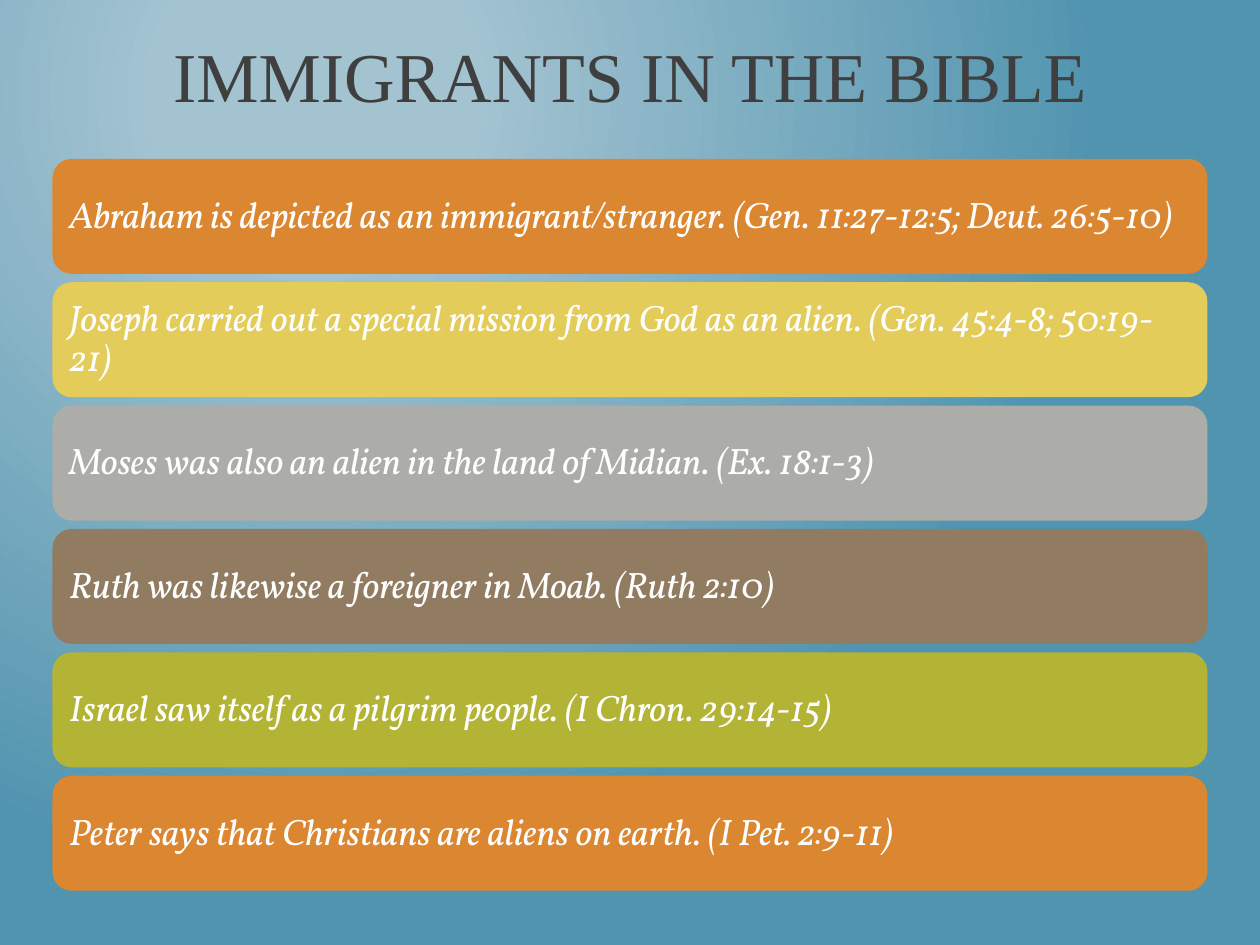
from lxml.etree import SubElement
from pptx import Presentation
from pptx.dml.color import RGBColor
from pptx.enum.shapes import MSO_SHAPE as Shape
from pptx.enum.text import MSO_ANCHOR as Anchor, PP_ALIGN as Align
from pptx.oxml.ns import qn
from pptx.util import Pt

ORANGE = RGBColor(0xDB, 0x86, 0x31)
YELLOW = RGBColor(0xE3, 0xCC, 0x5A)
GRAY = RGBColor(0xAC, 0xAD, 0xA8)
BROWN = RGBColor(0x92, 0x7C, 0x61)
GREEN = RGBColor(0xB3, 0xB4, 0x35)
WHITE = RGBColor(0xFF, 0xFF, 0xFF)
CHARCOAL = RGBColor(0x3F, 0x3F, 0x3F)
PALE_BLUE = RGBColor(0xA3, 0xC3, 0xD1)
DEEP_BLUE = RGBColor(0x51, 0x94, 0xAF)

PASSAGES = [
    ("Abraham is depicted as an immigrant/stranger. (Gen. 11:27-12:5; Deut. 26:5-10)", ORANGE),
    ("Joseph carried out a special mission from God as an alien. (Gen. 45:4-8; 50:19-21)", YELLOW),
    ("Moses was also an alien in the land of Midian. (Ex. 18:1-3)", GRAY),
    ("Ruth was likewise a foreigner in Moab. (Ruth 2:10)", BROWN),
    ("Israel saw itself as a pilgrim people. (I Chron. 29:14-15)", GREEN),
    ("Peter says that Christians are aliens on earth. (I Pet. 2:9-11)", ORANGE),
]
BAR_LEFT, BAR_TOP, BAR_WIDTH, BAR_HEIGHT, BAR_PITCH = 30, 90.8, 660, 65.7, 70.5


class SlideBuilder:
    TITLE_FONT = {"name": "Times New Roman", "size": Pt(40)}
    PASSAGE_FONT = {"name": "Vollkorn", "size": Pt(21), "italic": True}
    PASSAGE_FRAME = {"margin_left": Pt(6.3), "margin_right": Pt(6.3),
                     "margin_top": Pt(6.3), "margin_bottom": Pt(6.3)}

    def __init__(self, slide):
        self.slide = slide

    def background(self, inner, outer):
        fill = self.slide.background.fill
        fill.gradient()
        for stop, color, position in zip(fill.gradient_stops, (inner, outer), (0.2, 1)):
            stop.color.rgb = color
            stop.position = position
        # Turn the linear gradient into a circular one
        gradient = self.slide.element.find(".//" + qn("a:gradFill"))
        gradient.remove(gradient.find(qn("a:lin")))
        circle = SubElement(gradient, qn("a:path"), path="circle")
        SubElement(circle, qn("a:fillToRect"), l="50000", t="20000", r="100000", b="100000")

    def set_text(self, frame, text, font, color, align, frame_format):
        frame_format = {"word_wrap": True, "vertical_anchor": Anchor.MIDDLE, **frame_format}
        for name, value in frame_format.items():
            setattr(frame, name, value)
        paragraph = frame.paragraphs[0]
        paragraph.alignment = align
        run = paragraph.add_run()
        run.text = text
        for name, value in font.items():
            setattr(run.font, name, value)
        run.font.color.rgb = color
        return paragraph

    def title(self, text, left, top, width, height):
        heading = self.slide.shapes.add_textbox(Pt(left), Pt(top), Pt(width), Pt(height))
        self.set_text(heading.text_frame, text, self.TITLE_FONT, CHARCOAL, Align.CENTER, {})

    def passage_bar(self, text, color, left, top, width, height):
        bar = self.slide.shapes.add_shape(
            Shape.ROUNDED_RECTANGLE, Pt(left), Pt(top), Pt(width), Pt(height))
        bar.shadow.inherit = False
        bar.fill.solid()
        bar.fill.fore_color.rgb = color
        bar.line.fill.background()
        passage = self.set_text(bar.text_frame, text, self.PASSAGE_FONT, WHITE,
                                Align.LEFT, self.PASSAGE_FRAME)
        passage.line_spacing = 0.9


def main():
    deck = Presentation()
    deck.slide_width, deck.slide_height = Pt(720), Pt(540)
    builder = SlideBuilder(deck.slides.add_slide(deck.slide_layouts[6]))

    # Background and heading
    builder.background(PALE_BLUE, DEEP_BLUE)
    builder.title("IMMIGRANTS IN THE BIBLE", 24, 6.5, 672, 72)

    # Stack of passages
    for row, (text, color) in enumerate(PASSAGES):
        builder.passage_bar(text, color, BAR_LEFT, BAR_TOP + row * BAR_PITCH,
                            BAR_WIDTH, BAR_HEIGHT)

    deck.save("out.pptx")


if __name__ == "__main__":
    main()
